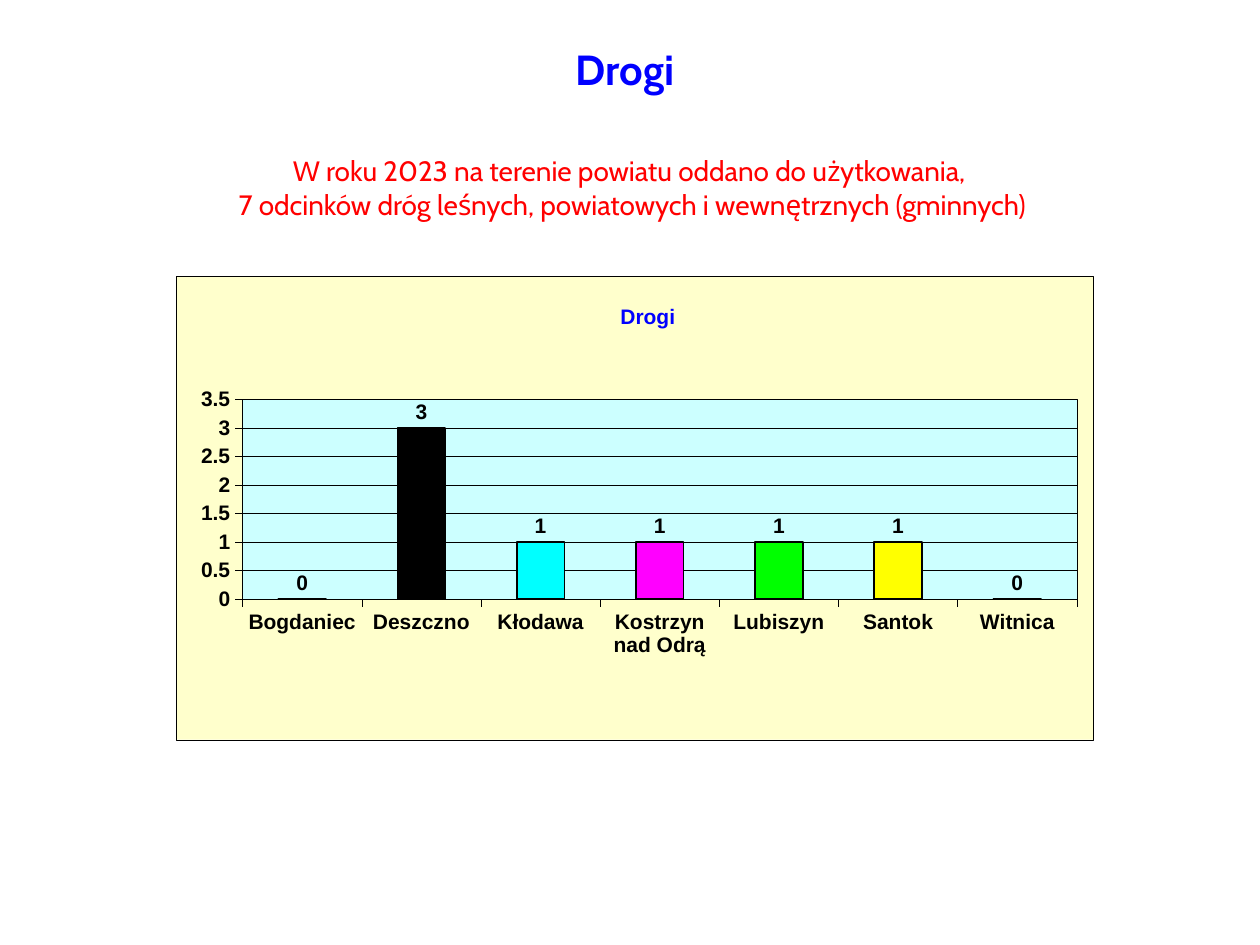
from dataclasses import dataclass
from typing import Any

from lxml.etree import _Element
from pptx import Presentation
from pptx.chart.data import CategoryChartData
from pptx.dml.color import RGBColor
from pptx.enum.chart import XL_CHART_TYPE, XL_LABEL_POSITION, XL_TICK_MARK
from pptx.enum.text import MSO_ANCHOR, PP_ALIGN
from pptx.oxml import parse_xml
from pptx.oxml.ns import nsdecls, qn
from pptx.util import Inches, Pt

WIDTH, HEIGHT = Inches(10), Inches(7.5)
HAIRLINE = 0.25


@dataclass
class Box:
    x: float
    y: float
    w: float
    h: float

    def emu(self) -> tuple[int, int, int, int]:
        return (int(self.x * WIDTH), int(self.y * HEIGHT),
                int(self.w * WIDTH), int(self.h * HEIGHT))


@dataclass
class Road:
    place: str
    count: int
    color: str


ROADS = [
    Road("Bogdaniec", 0, "FF0000"),
    Road("Deszczno", 3, "000000"),
    Road("Kłodawa", 1, "00FFFF"),
    Road("Kostrzyn nad Odrą", 1, "FF00FF"),
    Road("Lubiszyn", 1, "00FF00"),
    Road("Santok", 1, "FFFF00"),
    Road("Witnica", 0, "9999FF"),
]


def rgb(color: str) -> RGBColor:
    return RGBColor.from_string(color)


def set_attrs(obj: Any, values: dict[str, Any]) -> None:
    for name, value in values.items():
        setattr(obj, name, value)


def set_font(font: Any, name: str, size: float, color: str, bold: bool) -> None:
    set_attrs(font, {"name": name, "size": Pt(size), "bold": bold})
    font.color.rgb = rgb(color)


def set_line(line: Any, width: float) -> None:
    line.color.rgb = rgb("000000")
    line.width = Pt(width)


def write(sp: Any, box: Box, text: str, size: float, color: str,
          bold: bool, anchor: MSO_ANCHOR) -> None:
    set_attrs(sp, dict(zip(("left", "top", "width", "height"), box.emu())))
    tf = sp.text_frame
    set_attrs(tf, {"word_wrap": True, "vertical_anchor": anchor})
    p = tf.paragraphs[0]
    p.text = text
    p.alignment = PP_ALIGN.CENTER
    for r in p.runs:
        set_font(r.font, "Cabin", size, color, bold)


def area_props(fill: str) -> _Element:
    return parse_xml(
        f'<c:spPr {nsdecls("c", "a")}><a:solidFill><a:srgbClr val="{fill}"/></a:solidFill>'
        f'<a:ln w="{Pt(HAIRLINE)}"><a:solidFill><a:srgbClr val="000000"/></a:solidFill></a:ln></c:spPr>')


def place(parent: _Element, index: int, inner: bool, **shares: float) -> None:
    for old in parent.findall(qn("c:layout")):
        parent.remove(old)
    target = '<c:layoutTarget val="inner"/>' if inner else ""
    modes = "".join(f'<c:{k}Mode val="edge"/>' for k in "xy")
    values = "".join(f'<c:{k} val="{v}"/>' for k, v in shares.items())
    parent.insert(index, parse_xml(
        f'<c:layout {nsdecls("c")}><c:manualLayout>{target}{modes}{values}'
        '</c:manualLayout></c:layout>'))


def add_roads_chart(s: Any, box: Box) -> None:
    data = CategoryChartData()
    data.categories = [road.place for road in ROADS]
    data.add_series("Drogi", [road.count for road in ROADS])
    chart = s.shapes.add_chart(XL_CHART_TYPE.COLUMN_CLUSTERED, *box.emu(), data).chart
    chart.has_legend = False
    set_font(chart.font, "Arial", 10, "000000", False)

    chart.has_title = True
    p = chart.chart_title.text_frame.paragraphs[0]
    p.text = "Drogi"
    set_font(p.runs[0].font, "Arial", 12, "0000FF", True)
    chart.chart_title.include_in_layout = False

    for axis in (chart.category_axis, chart.value_axis):
        axis.major_tick_mark = XL_TICK_MARK.OUTSIDE
        set_font(axis.tick_labels.font, "Arial", 12, "000000", True)
        set_line(axis.format.line, HAIRLINE)
    set_attrs(chart.value_axis, {"minimum_scale": 0, "maximum_scale": 3.5,
                                 "major_unit": 0.5, "has_major_gridlines": True})
    set_line(chart.value_axis.major_gridlines.format.line, HAIRLINE)

    plot = chart.plots[0]
    set_attrs(plot, {"gap_width": 150, "vary_by_categories": False})
    series = plot.series[0]
    series.format.fill.solid()
    series.format.fill.fore_color.rgb = rgb("0066CC")
    set_line(series.format.line, 1)
    for i, road in enumerate(ROADS):
        fmt = series.points[i].format
        fmt.fill.solid()
        fmt.fill.fore_color.rgb = rgb(road.color)
        set_line(fmt.line, 1)
    labels = series.data_labels
    set_attrs(labels, {"show_value": True, "position": XL_LABEL_POSITION.OUTSIDE_END})
    set_font(labels.font, "Arial", 12, "000000", True)

    root = chart.element.find(qn("c:chart"))
    area = root.find(qn("c:plotArea"))
    place(root.find(qn("c:title")), 1, False, x=0.48, y=0.05)
    place(area, 0, True, x=0.072, y=0.266, w=0.91, h=0.431)
    area.append(area_props("CCFFFF"))
    root.addnext(area_props("FFFFCC"))


def main() -> None:
    prs = Presentation()
    set_attrs(prs, {"slide_width": WIDTH, "slide_height": HEIGHT})
    s = prs.slides.add_slide(prs.slide_layouts[5])
    write(s.shapes.title, Box(0.136, 0.143, 0.732, 0.11),
          "W roku 2023 na terenie powiatu oddano do użytkowania, \v"
          "7 odcinków dróg leśnych, powiatowych i wewnętrznych (gminnych)",
          16, "FF0000", False, MSO_ANCHOR.MIDDLE)
    heading = Box(0.421, 0.039, 0.15, 0.067)
    write(s.shapes.add_textbox(*heading.emu()), heading, "Drogi",
          24, "0000FF", True, MSO_ANCHOR.BOTTOM)
    add_roads_chart(s, Box(0.14, 0.292, 0.728, 0.491))
    prs.save("out.pptx")


if __name__ == "__main__":
    main()
